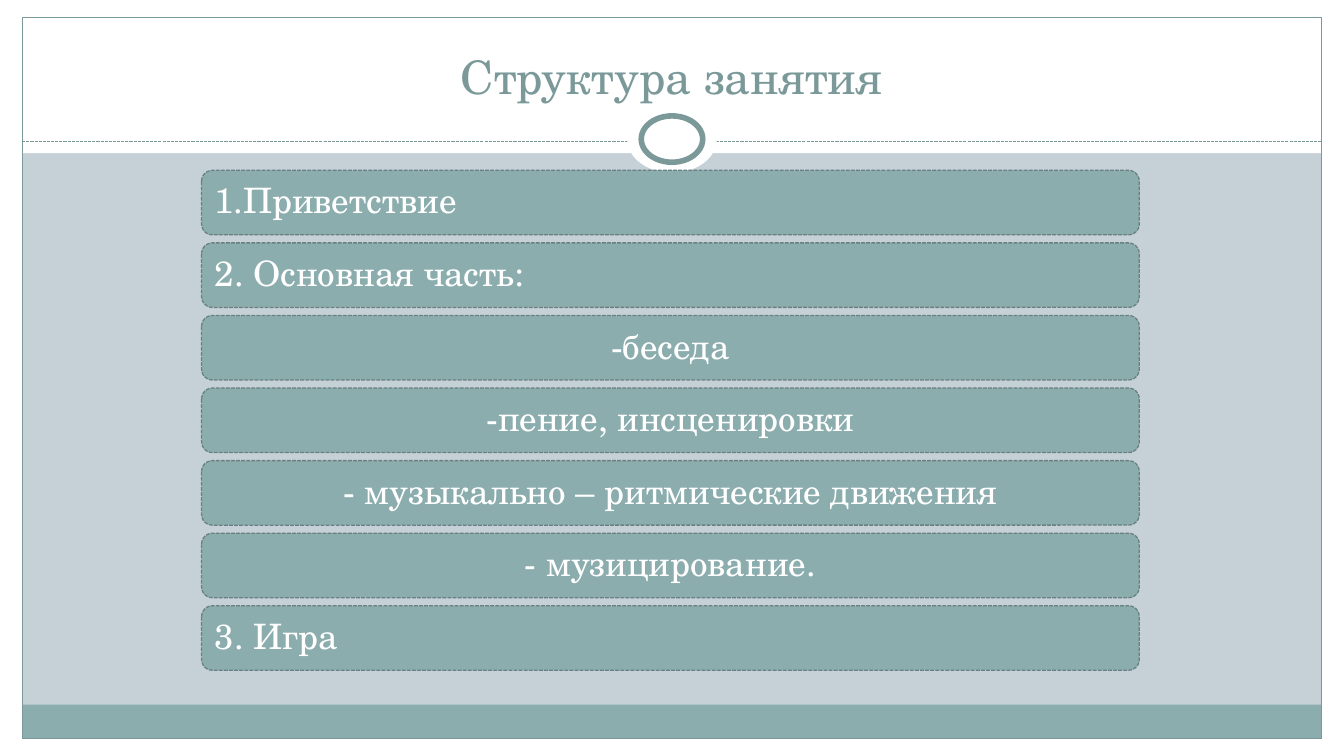
from pptx import Presentation, util as u
from pptx.dml.color import RGBColor
from pptx.enum import dml, shapes, text
from pptx.oxml.ns import qn
from lxml import etree

WIDE, HIGH = 13.33, 7.5
SIDE, EDGE = 0.22, 0.17
INNER = WIDE - 2 * SIDE
MID = WIDE / 2
RULE = 1.4
TOP, STEP = 1.69, 0.72
WHITE, TEAL, GREY, DARK = "FFFFFF", "8CADAE", "7C999A", "688081"
KIND = shapes.MSO_SHAPE
LEFT, MIDDLE = text.PP_ALIGN.LEFT, text.PP_ALIGN.CENTER
STEPS = [
    ("1.Приветствие", LEFT),
    ("2. Основная часть:", LEFT),
    ("-беседа", MIDDLE),
    ("-пение, инсценировки", MIDDLE),
    ("- музыкально – ритмические движения", MIDDLE),
    ("- музицирование.", MIDDLE),
    ("3. Игра", LEFT),
]


def color(code):
    return RGBColor.from_string(code)


def stroke(line, code, width, dash=False):
    line.color.rgb = color(code)
    line.width = u.Pt(width)
    if dash:
        line.dash_style = dml.MSO_LINE.SQUARE_DOT


def shape(slide, kind, box, fill=None, line=None, width=0.75, dash=False):
    item = slide.shapes.add_shape(kind, *map(u.Inches, box))
    item.shadow.inherit = False
    if fill:
        item.fill.solid()
        item.fill.fore_color.rgb = color(fill)
    else:
        item.fill.background()
    if line:
        stroke(item.line, line, width, dash)
    else:
        item.line.fill.background()
    return item


def write(item, words, size, code, align=MIDDLE, anchor=text.MSO_ANCHOR.MIDDLE, space=1.0):
    frame = item.text_frame
    frame.word_wrap = True
    frame.vertical_anchor = anchor
    part = frame.paragraphs[0]
    part.alignment = align
    part.line_spacing = space
    run = part.add_run()
    run.text = words
    run.font.name = "TeX Gyre Schola"
    run.font.size = u.Pt(size)
    run.font.color.rgb = color(code)


def rule(slide):
    ends = (SIDE, RULE, WIDE - SIDE, RULE)
    line = slide.shapes.add_connector(shapes.MSO_CONNECTOR.STRAIGHT, *map(u.Inches, ends))
    stroke(line.line, GREY, 0.75, True)
    etree.SubElement(line._element.spPr, qn("a:effectLst"))


def ring(slide, wide, high, **style):
    box = (MID - wide / 2, RULE - 0.02 - high / 2, wide, high)
    shape(slide, KIND.OVAL, box, WHITE, **style)


def frame(slide):
    bands = [
        (0, HIGH - EDGE, WIDE, EDGE),
        (0, 0, WIDE, 1.52),
        (0, 0, SIDE, HIGH),
        (WIDE - SIDE, 0, SIDE, HIGH),
    ]
    for box in bands:
        shape(slide, KIND.RECTANGLE, box, WHITE)
    shape(slide, KIND.RECTANGLE, (SIDE, 6.99, INNER, 0.34), TEAL)
    shape(slide, KIND.RECTANGLE, (SIDE, EDGE, INNER, HIGH - 2 * EDGE), line=GREY)
    rule(slide)
    ring(slide, 0.89, 0.67)
    ring(slide, 0.61, 0.46, line=GREY, width=4)


def title(slide, words):
    box = (0.44, 0.25, WIDE - 0.88, 0.83)
    item = slide.shapes.add_textbox(*map(u.Inches, box))
    write(item, words, 33, GREY, anchor=text.MSO_ANCHOR.BOTTOM)


def step(slide, row, words, align):
    box = (2, TOP + row * STEP, 9.3, 0.64)
    item = shape(slide, KIND.ROUNDED_RECTANGLE, box, TEAL, DARK, 0.9, True)
    write(item, words, 25, WHITE, align, space=0.9)


def main():
    deck = Presentation()
    deck.slide_width, deck.slide_height = u.Inches(WIDE), u.Inches(HIGH)
    slide = deck.slides.add_slide(deck.slide_layouts[6])
    slide.background.fill.solid()
    slide.background.fill.fore_color.rgb = color("C5D1D7")
    frame(slide)
    title(slide, "Структура занятия")
    for row, (words, align) in enumerate(STEPS):
        step(slide, row, words, align)
    deck.save("out.pptx")


if __name__ == "__main__":
    main()
